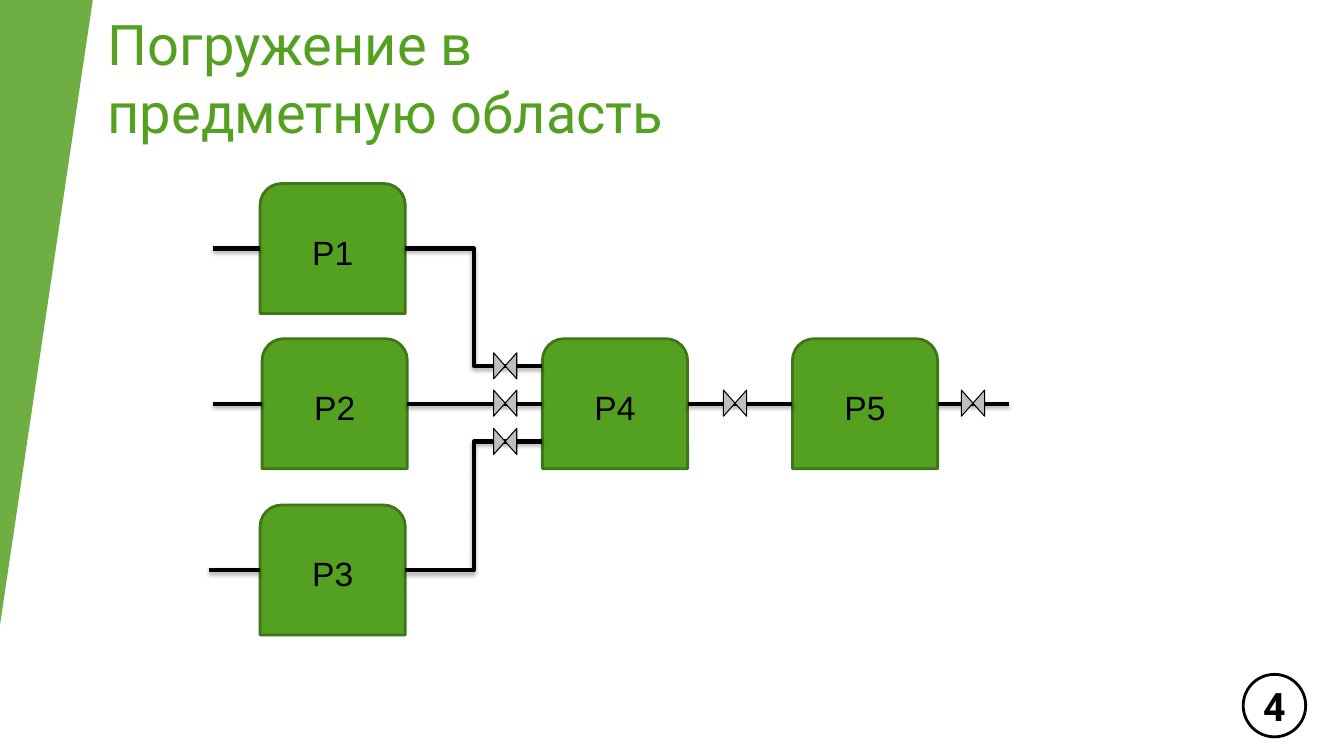
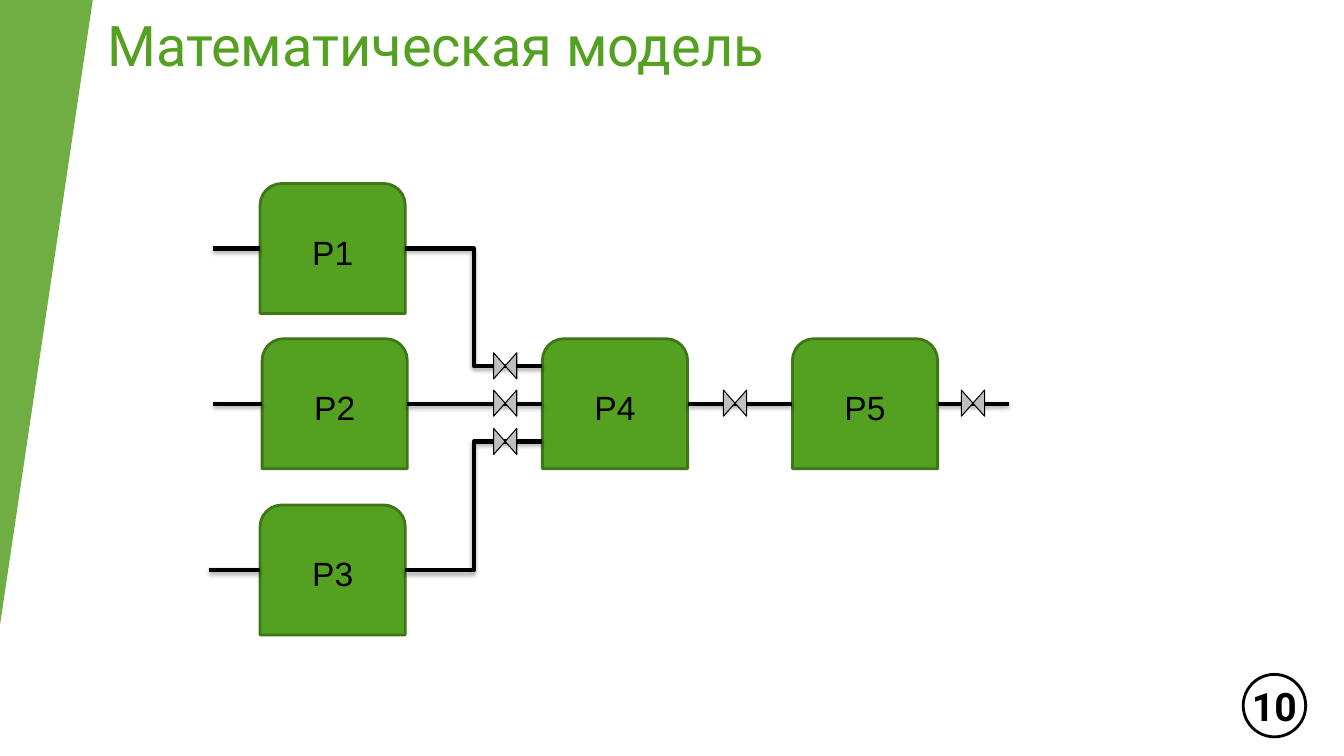
from lxml import etree
from pptx import Presentation
from pptx.dml.color import RGBColor
from pptx.enum.shapes import MSO_CONNECTOR, MSO_SHAPE
from pptx.enum.text import MSO_ANCHOR, PP_ALIGN
from pptx.oxml import parse_xml
from pptx.util import Inches, Pt

STRAIGHT = MSO_CONNECTOR.STRAIGHT
ELBOW = MSO_CONNECTOR.ELBOW
TRIANGLE = MSO_SHAPE.RIGHT_TRIANGLE
ISOSCELES = MSO_SHAPE.ISOSCELES_TRIANGLE
TANK = MSO_SHAPE.ROUND_2_SAME_RECTANGLE
VALVE = MSO_SHAPE.FLOWCHART_COLLATE
OVAL = MSO_SHAPE.OVAL
CENTER = PP_ALIGN.CENTER
MIDDLE = MSO_ANCHOR.MIDDLE
BOTTOM = MSO_ANCHOR.BOTTOM
LEFT_SIDE, RIGHT_SIDE = 1, 3

COLORS = {
    "green": "54A021",
    "dark_green": "3E7618",
    "band": "6EAE42",
    "gray": "BFBFBF",
    "black": "000000",
    "white": "FFFFFF",
}
RGB = {name: RGBColor.from_string(value) for name, value in COLORS.items()}

PIPE_SHADOW = (
    '<a:effectLst xmlns:a="http://schemas.openxmlformats.org/drawingml/2006/main">'
    '<a:outerShdw blurRad="40000" dist="23000" dir="5400000" rotWithShape="0">'
    '<a:srgbClr val="000000"><a:alpha val="35000"/></a:srgbClr>'
    "</a:outerShdw></a:effectLst>"
)

SLIDES = [
    ("Погружение в предметную область", "4", 1.31),
    ("Математическая модель", "10", 0.65),
]
TANK_WIDTH, TANK_HEIGHT = 1.44, 1.29
TANKS = {
    "Р1": (2.58, 1.82),
    "Р2": (2.6, 3.36),
    "Р3": (2.58, 5.01),
    "Р4": (5.38, 3.36),
    "Р5": (7.86, 3.36),
}
INLETS = {"Р1": 2.11, "Р2": 2.11, "Р3": 2.07}
SIDE_FLOWS = {"Р1": 3.63, "Р3": 4.38}
MAIN_FLOWS = [("Р2", "Р4"), ("Р4", "Р5")]
OUTLET_END = 10.01
VALVE_WIDTH, VALVE_HEIGHT = 0.26, 0.23
VALVE_CENTERS = [(5.01, 3.63), (5.01, 4), (5.01, 4.38), (7.29, 4), (9.65, 4)]


def add_box(page, kind, left, top, width, height, fill, line=None, weight=2):
    box = page.shapes.add_shape(
        kind, Inches(left), Inches(top), Inches(width), Inches(height)
    )
    box.shadow.inherit = False
    box.fill.solid()
    box.fill.fore_color.rgb = RGB[fill]
    if line:
        box.line.color.rgb = RGB[line]
        box.line.width = Pt(weight)
    else:
        box.line.fill.background()
    return box


def write(box, text, font, size, color, anchor, align=None, bold=False):
    frame = box.text_frame
    frame.vertical_anchor = anchor
    para = frame.paragraphs[0]
    para.text = text
    para.alignment = align
    para.font.name = font
    para.font.size = Pt(size)
    para.font.bold = bold
    para.font.color.rgb = RGB[color]
    return frame


deck = Presentation()
deck.slide_width = Inches(13.33)
deck.slide_height = Inches(7.5)

for title, number, title_height in SLIDES:
    page = deck.slides.add_slide(deck.slide_layouts[6])

    band = add_box(page, ISOSCELES, 0, 0, 0.92, 6.2, "band")
    band.adjustments[0] = 1
    band.rotation = 180

    title_box = page.shapes.add_textbox(
        Inches(0.97), Inches(0.17), Inches(6.95), Inches(title_height)
    )
    write(title_box, title, "Roboto", 40, "green", BOTTOM).word_wrap = True

    tanks = {}
    for name, (left, top) in TANKS.items():
        tank = add_box(
            page, TANK, left, top, TANK_WIDTH, TANK_HEIGHT, "green", "dark_green"
        )
        write(tank, name, "Arial", 24, "black", MIDDLE, CENTER)
        tanks[name] = tank

    pipes = []
    for name, start in INLETS.items():
        tank = tanks[name]
        middle = tank.top + tank.height // 2
        pipe = page.shapes.add_connector(
            STRAIGHT, Inches(start), middle, tank.left, middle
        )
        pipe.end_connect(tank, LEFT_SIDE)
        pipes.append(pipe)

    for name, entry in SIDE_FLOWS.items():
        tank = tanks[name]
        pipes.append(page.shapes.add_connector(
            ELBOW, tank.left + tank.width, tank.top + tank.height // 2,
            tanks["Р4"].left, Inches(entry)
        ))

    for source, target in MAIN_FLOWS:
        pipe = page.shapes.add_connector(STRAIGHT, 0, 0, 0, 0)
        pipe.begin_connect(tanks[source], RIGHT_SIDE)
        pipe.end_connect(tanks[target], LEFT_SIDE)
        pipes.append(pipe)

    last = tanks["Р5"]
    middle = last.top + last.height // 2
    outlet = page.shapes.add_connector(
        STRAIGHT, last.left + last.width, middle, Inches(OUTLET_END), middle
    )
    outlet.begin_connect(last, RIGHT_SIDE)
    pipes.append(outlet)

    for pipe in pipes:
        pipe.line.color.rgb = RGB["black"]
        pipe.line.width = Pt(3)
        pipe._element.spPr.append(parse_xml(PIPE_SHADOW))

    for center_x, center_y in VALVE_CENTERS:
        valve = add_box(
            page, VALVE, center_x - VALVE_WIDTH / 2, center_y - VALVE_HEIGHT / 2,
            VALVE_WIDTH, VALVE_HEIGHT, "gray", "black", 0.75
        )
        valve.rotation = 90

    badge = add_box(page, OVAL, 12.33, 6.69, 0.62, 0.62, "white", "black")
    frame = write(badge, number, "Roboto", 28, "black", MIDDLE, CENTER, True)
    frame.word_wrap = False
    frame.margin_left = frame.margin_right = 0
    frame.margin_top = frame.margin_bottom = 0

deck.save("out.pptx")
